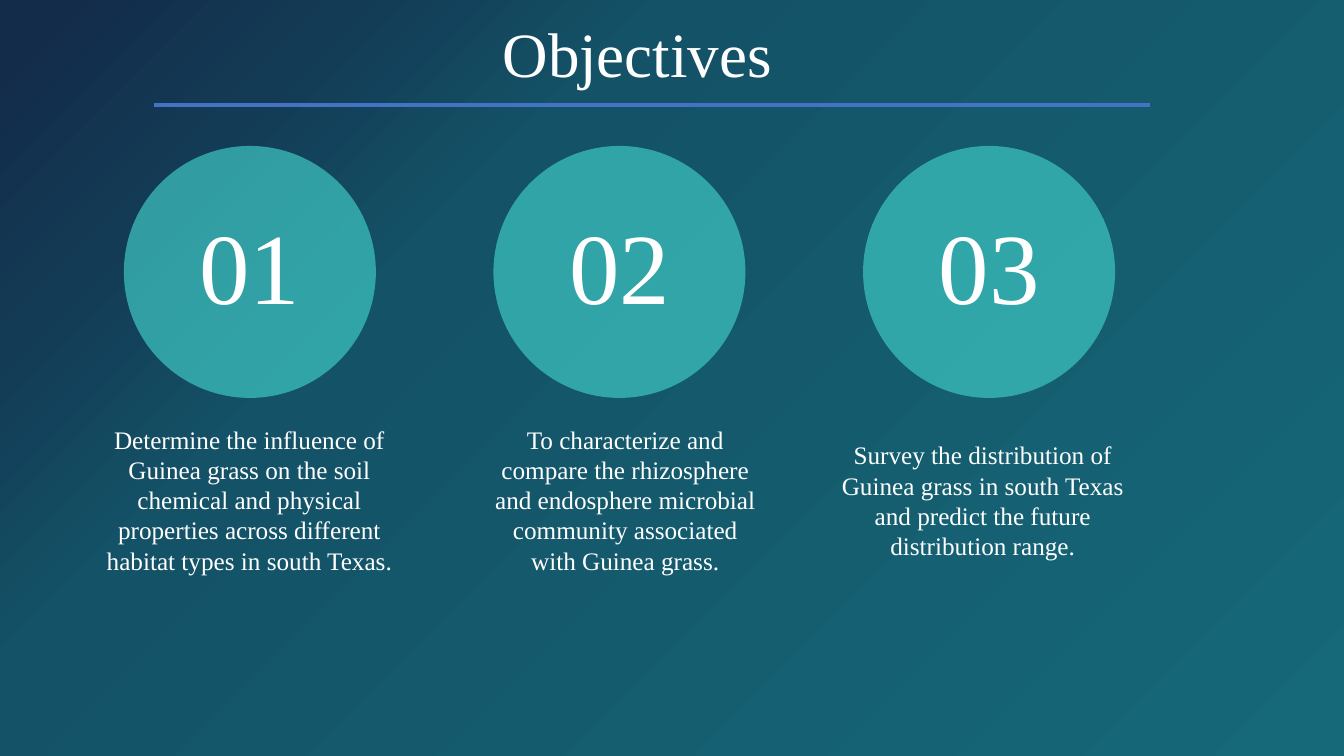
from lxml import etree
from pptx import Presentation
from pptx.dml.color import RGBColor
from pptx.enum.shapes import MSO_CONNECTOR, MSO_SHAPE
from pptx.enum.text import MSO_ANCHOR as ANCHOR, MSO_AUTO_SIZE as FIT, PP_ALIGN as ALIGN
from pptx.oxml.ns import qn
from pptx.util import Emu, Pt

EMU_PER_PX = 9525
COLORS = {"white": "FFFFFF", "rule": "4472C4", "disc": "3EC7C3"}
BACKDROP = [(0, "156979"), (68, "145267"), (83, "133B55"), (97, "122C4A")]
TITLE_ONLY = 5


def px(n):
    return Emu(n * EMU_PER_PX)


def rgb(name):
    return RGBColor.from_string(COLORS[name])


class Deck:
    font = "Times New Roman"

    def __init__(self, width, height):
        self.prs = Presentation()
        self.prs.slide_width, self.prs.slide_height = px(width), px(height)
        self.s = self.prs.slides.add_slide(self.prs.slide_layouts[TITLE_ONLY])

    def background(self, stops, angle):
        fill = self.s.background.fill
        fill.gradient()
        fill.gradient_angle = angle
        gs_list = next(self.s.element.iter(qn("a:gsLst")))
        for gs in list(gs_list):
            gs_list.remove(gs)
        for pos, color in stops:
            gs = etree.SubElement(gs_list, qn("a:gs"), pos=str(pos * 1000))
            etree.SubElement(gs, qn("a:srgbClr"), val=color)

    def text(self, tf, text, size, align, anchor, spacing=1.0):
        tf.word_wrap = True
        tf.vertical_anchor = anchor
        p = tf.paragraphs[0]
        p.alignment, p.line_spacing = align, spacing
        r = p.add_run()
        r.text = text
        r.font.name, r.font.size = self.font, Pt(size)
        r.font.color.rgb = rgb("white")

    def title(self, text, x, y, w, h):
        sp = self.s.shapes.title
        sp.left, sp.top, sp.width, sp.height = map(px, (x, y, w, h))
        sp.text_frame.auto_size = FIT.NONE
        self.text(sp.text_frame, text, 45, ALIGN.LEFT, ANCHOR.BOTTOM, 1.15)

    def rule(self, x1, x2, y):
        line = self.s.shapes.add_connector(MSO_CONNECTOR.STRAIGHT, *map(px, (x1, y, x2, y)))
        line.line.color.rgb, line.line.width = rgb("rule"), Pt(2.25)
        etree.SubElement(line.element.spPr, qn("a:effectLst"))

    def badge(self, text, x, y, size, inset):
        shapes = self.s.shapes.add_group_shape().shapes
        disc = shapes.add_shape(MSO_SHAPE.OVAL, *map(px, (x, y, size, size)))
        disc.shadow.inherit = False
        disc.fill.solid()
        disc.fill.fore_color.rgb = rgb("disc")
        color = disc.element.spPr.find(qn("a:solidFill"))[0]
        etree.SubElement(color, qn("a:alpha"), val="70000")
        disc.line.fill.background()

        side = size - 2 * inset
        tf = shapes.add_textbox(*map(px, (x + inset, y + inset, side, side))).text_frame
        tf.margin_left = tf.margin_right = tf.margin_top = tf.margin_bottom = px(12)
        self.text(tf, text, 72, ALIGN.CENTER, ANCHOR.MIDDLE, 0.9)

    def caption(self, text, x, y, w, h):
        tf = self.s.shapes.add_textbox(*map(px, (x, y, w, h))).text_frame
        tf.auto_size = FIT.SHAPE_TO_FIT_TEXT
        self.text(tf, text, 18, ALIGN.CENTER, ANCHOR.TOP)


def main():
    deck = Deck(1280, 720)
    deck.background(BACKDROP, 135)

    # Heading
    deck.title("Objectives", 469, 2, 933, 89)
    deck.rule(147, 1095, 100)

    # Numbered objectives: text, then caption left, top, width, height
    objectives = [
        ("Determine the influence of Guinea grass on the soil chemical and physical "
         "properties across different habitat types in south Texas.", 71, 399, 333, 184),
        ("To characterize and compare the rhizosphere and endosphere microbial "
         "community associated with Guinea grass.", 458, 399, 275, 156),
        ("Survey the distribution of Guinea grass in south Texas and predict the "
         "future distribution range.", 786, 414, 300, 156),
    ]
    for i, (text, *box) in enumerate(objectives):
        deck.badge(f"{i + 1:02}", 118 + 352 * i, 139, 240, 35)
        deck.caption(text, *box)

    deck.prs.save("out.pptx")


if __name__ == "__main__":
    main()
